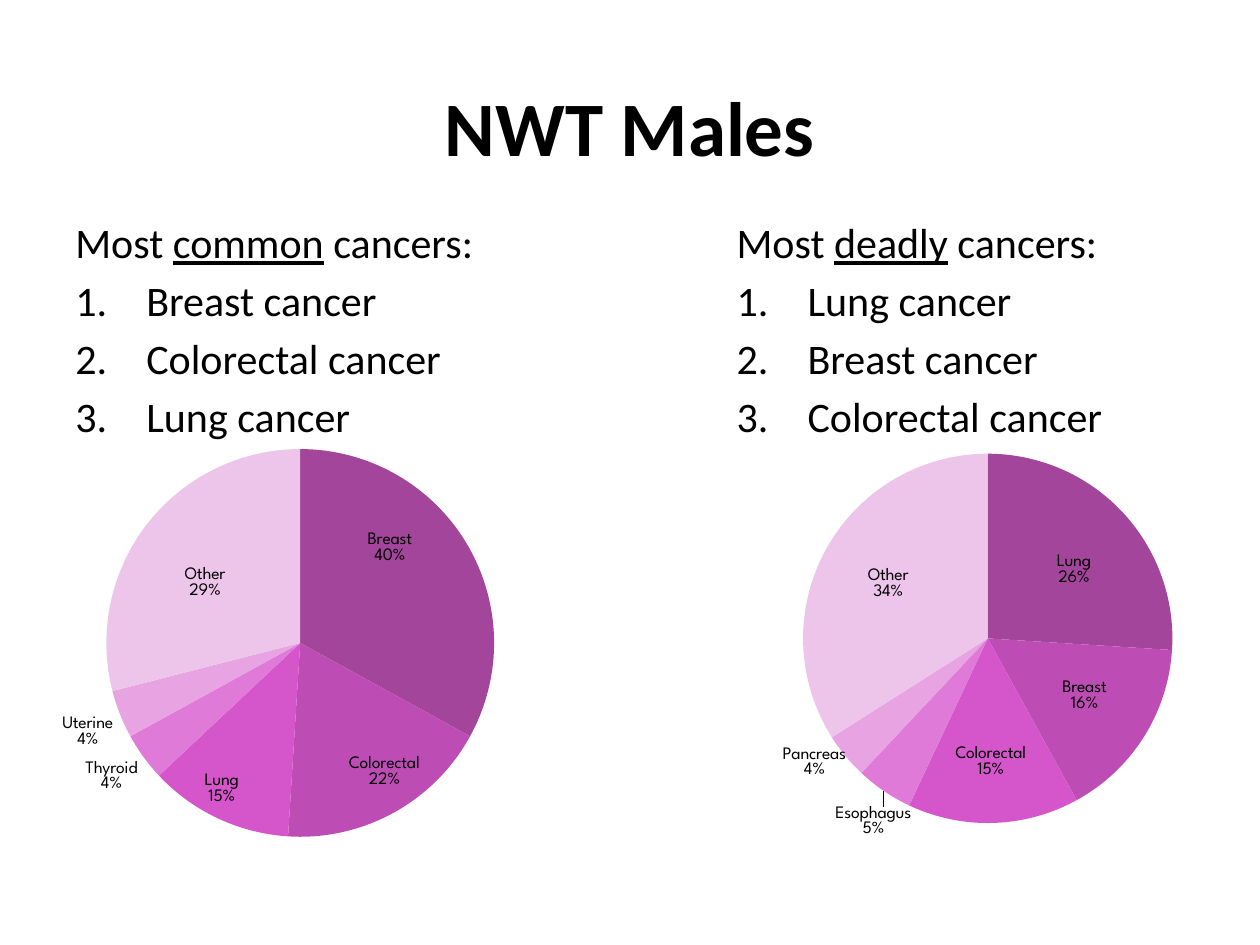
import pptx
import pptx.chart.data
import pptx.dml.color
import pptx.enum.chart
import pptx.enum.text
import pptx.oxml
import pptx.oxml.ns
import pptx.util
from pptx.util import Cm, Pt

BLACK = pptx.dml.color.RGBColor(0x00, 0x00, 0x00)
SLICE_COLOURS = [
    pptx.dml.color.RGBColor.from_string(code)
    for code in ("A3459B", "BD4DB5", "D556CB", "E07AD9", "E8A3E2", "EDC4EA")
]
TEXT_FONT = "Calibri"
CHART_FONT = "League Spartan"
CENTER = pptx.enum.chart.XL_LABEL_POSITION.CENTER
OUTSIDE = pptx.enum.chart.XL_LABEL_POSITION.OUTSIDE_END


def style_font(font, size, name=TEXT_FONT):
    """Apply the shared black text style."""
    font.name = name
    font.size = Pt(size)
    font.color.rgb = BLACK


def add_title(slide, box, wording):
    """Place the bold centred heading in the box."""
    frame = slide.shapes.add_textbox(*map(Cm, box)).text_frame
    frame.word_wrap = True
    heading = frame.paragraphs[0]
    heading.text = wording
    heading.alignment = pptx.enum.text.PP_ALIGN.CENTER
    style_font(heading.runs[0].font, 44)
    heading.runs[0].font.bold = True


def number_paragraph(paragraph):
    """Give a paragraph an automatic number and hanging indent."""
    properties = paragraph._p.get_or_add_pPr()
    properties.set("marL", str(Cm(1.43)))
    properties.set("indent", str(-Cm(1.43)))
    numbering = pptx.oxml.parse_xml(
        f'<a:buAutoNum {pptx.oxml.ns.nsdecls("a")} type="arabicPeriod"/>'
    )
    properties.append(numbering)


def add_ranking(slide, box, emphasis, cancers):
    """Place an introduction and its numbered cancers in the box."""
    frame = slide.shapes.add_textbox(*map(Cm, box)).text_frame
    frame.word_wrap = True
    introduction = frame.paragraphs[0]
    for wording in ("Most ", emphasis, " cancers:"):
        run = introduction.add_run()
        run.text = wording
        run.font.underline = wording == emphasis
    for cancer in cancers:
        item = frame.add_paragraph()
        item.text = cancer
        item.space_before = Pt(4.3)
        number_paragraph(item)
    for paragraph in frame.paragraphs:
        for run in paragraph.runs:
            style_font(run.font, 24)


def layout_xml(**settings):
    """Build a manual chart layout from its named settings."""
    entries = "".join(f'<c:{key} val="{value}"/>' for key, value in settings.items())
    return pptx.oxml.parse_xml(
        f'<c:layout {pptx.oxml.ns.nsdecls("c")}>'
        f"<c:manualLayout>{entries}</c:manualLayout></c:layout>"
    )


def label_slice(label, position, wording):
    """Style one slice label, with its own wording if given."""
    if wording:
        label.text_frame.text = wording
        for paragraph in label.text_frame.paragraphs:
            style_font(paragraph.runs[0].font, 10, CHART_FONT)
    else:
        style_font(label.font, 10, CHART_FONT)
    label.position = position


def show_name_and_percent(label_element, offset):
    """Show category over percentage and shift the label."""
    qn = pptx.oxml.ns.qn
    for flag in ("LegendKey", "Val", "CatName", "SerName", "Percent", "BubbleSize"):
        shown = "1" if flag in ("CatName", "Percent") else "0"
        label_element.find(qn(f"c:show{flag}")).set("val", shown)
    separator = pptx.oxml.parse_xml(
        f'<c:separator {pptx.oxml.ns.nsdecls("c")}>\n</c:separator>'
    )
    label_element.find(qn("c:showBubbleSize")).addnext(separator)
    if any(offset):
        shift = layout_xml(x=offset[0], y=offset[1])
        label_element.find(qn("c:idx")).addnext(shift)


def add_cancer_pie(slide, box, plot_box, slices):
    """Place a pie in the box from (name, share, position, offset, wording)."""
    names, shares, positions, offsets, wordings = zip(*slices)
    data = pptx.chart.data.CategoryChartData()
    data.categories = names
    data.add_series("Series 1", shares)
    chart = slide.shapes.add_chart(
        pptx.enum.chart.XL_CHART_TYPE.PIE, *map(Cm, box), data
    ).chart
    chart.has_legend = False
    chart.has_title = False
    style_font(chart.font, 18, CHART_FONT)
    chart.plots[0].vary_by_categories = True

    points = chart.plots[0].series[0].points
    for index, colour in enumerate(SLICE_COLOURS):
        point = points[index]
        point.format.fill.solid()
        point.format.fill.fore_color.rgb = colour
        point.format.line.fill.background()
        label_slice(point.data_label, positions[index], wordings[index])

    qn = pptx.oxml.ns.qn
    chart_space = chart._chartSpace
    for label_element, offset in zip(chart_space.iter(qn("c:dLbl")), offsets):
        show_name_and_percent(label_element, offset)

    plot_area = next(chart_space.iter(qn("c:plotArea")))
    for automatic in plot_area.findall(qn("c:layout")):
        plot_area.remove(automatic)
    x, y, w, h = plot_box
    plot_area.insert(0, layout_xml(
        layoutTarget="inner", xMode="edge", yMode="edge", x=x, y=y, w=w, h=h
    ))


def main():
    """Build and save the slide."""
    deck = pptx.Presentation()
    deck.slide_width, deck.slide_height = Cm(25.4), Cm(19.05)
    slide = deck.slides.add_slide(deck.slide_layouts[6])
    add_title(slide, (1.27, 1.47, 22.86, 2.74), "NWT Males")
    add_ranking(slide, (1.27, 4.24, 10.8, 7.62), "common",
                ("Breast cancer", "Colorectal cancer", "Lung cancer"))
    add_ranking(slide, (14.6, 4.24, 10.8, 5.28), "deadly",
                ("Lung cancer", "Breast cancer", "Colorectal cancer"))
    add_cancer_pie(slide, (-0.41, 8.69, 12.55, 9.09), (0.2, 0.04, 0.63, 0.86), (
        ("Breast", 33, CENTER, (0.01, -0.1), "Breast\n40%"),
        ("Colorectal", 18, CENTER, (0.06, 0.1), "Colorectal\n22%"),
        ("Lung", 12, CENTER, (-0.06, 0.13), "Lung\n15%"),
        ("Thyroid", 4, OUTSIDE, (0, 0), None),
        ("Uterine", 4, OUTSIDE, (0, 0), None),
        ("Other", 29, CENTER, (-0.03, 0), None),
    ))
    add_cancer_pie(slide, (13.54, 8.69, 12.62, 9.09), (0.21, 0.05, 0.59, 0.82), (
        ("Lung", 26, CENTER, (0.03, -0.01), None),
        ("Breast", 16, CENTER, (0.03, 0.02), None),
        ("Colorectal", 15, CENTER, (0, 0.07), None),
        ("Esophagus", 5, OUTSIDE, (0.05, 0.02), None),
        ("Pancreas", 4, OUTSIDE, (0.01, -0.03), None),
        ("Other", 34, CENTER, (-0.03, -0.02), None),
    ))
    deck.save("out.pptx")


if __name__ == "__main__":
    main()
